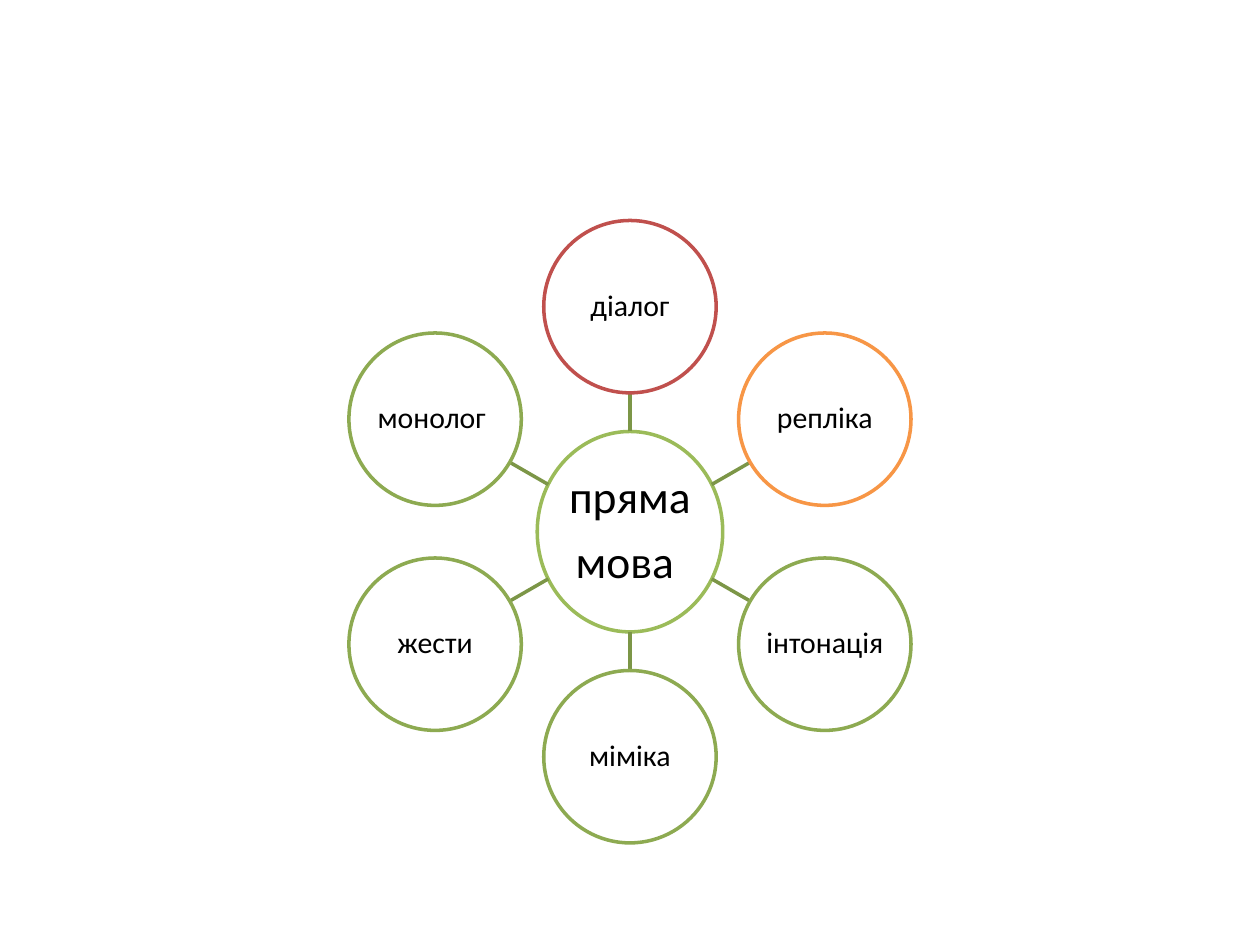
from math import cos, hypot, radians, sin

from pptx import Presentation
from pptx import util as u
from pptx.dml.color import RGBColor
from pptx.enum import shapes, text
from pptx.oxml.ns import qn
from lxml import etree

WIDTH, HEIGHT = 10, 7.5
GREEN, RED, ORANGE = "8DAA51", "C0504D", "F79646"
HUB_COLOR, SPOKE_COLOR = "9BBB59", "7C9647"
HUB_LINES = ["пряма ", "мова "]
SATELLITES = [  # clockwise from the top
    ("діалог", RED),
    ("репліка", ORANGE),
    ("інтонація", GREEN),
    ("міміка", GREEN),
    ("жести", GREEN),
    ("монолог ", GREEN),
]


def color(hex_string):
    return RGBColor.from_string(hex_string)


def add_bubble(slide, center, size, lines, font_size, outline, inset):
    """Add a white ellipse around a center, with one paragraph per line."""
    (x, y), (width, height) = center, size
    bubble = slide.shapes.add_shape(
        shapes.MSO_SHAPE.OVAL, u.Inches(x - width / 2), u.Inches(y - height / 2),
        u.Inches(width), u.Inches(height))
    bubble.shadow.inherit = False
    bubble.fill.solid()
    bubble.fill.fore_color.rgb = color("FFFFFF")
    bubble.line.color.rgb = color(outline)
    bubble.line.width = u.Pt(2)

    frame = bubble.text_frame
    frame.word_wrap = True
    frame.vertical_anchor = text.MSO_ANCHOR.MIDDLE
    frame.margin_left = frame.margin_right = u.Inches(inset)
    frame.margin_top = frame.margin_bottom = u.Inches(inset)
    frame.text = "\n".join(lines)
    for paragraph in frame.paragraphs:
        paragraph.alignment = text.PP_ALIGN.CENTER
        paragraph.line_spacing = 0.9
        paragraph.space_after = u.Pt(0.35 * font_size)
        paragraph.font.name = "Calibri"
        paragraph.font.size = u.Pt(font_size)
        paragraph.font.color.rgb = color("000000")


def add_spoke(slide, start, end):
    spoke = slide.shapes.add_connector(
        shapes.MSO_CONNECTOR.STRAIGHT, *(u.Inches(value) for value in (*start, *end)))
    spoke.line.color.rgb = color(SPOKE_COLOR)
    spoke.line.width = u.Pt(2)
    etree.SubElement(spoke._element.spPr, qn("a:effectLst"))


def add_radial_diagram(slide, left, top, width, height):
    """Place a hub and its ring of satellites in a box."""
    center_x, center_y = left + width / 2, top + height / 2
    diameter = 0.277 * height
    orbit = (height - diameter) / 2
    hub_width, hub_height = 0.298 * height, 0.322 * height

    def at(distance, angle):
        return center_x + distance * cos(angle), center_y + distance * sin(angle)

    add_bubble(slide, (center_x, center_y), (hub_width, hub_height),
               HUB_LINES, 26, HUB_COLOR, 0.02)
    for index, (label, outline) in enumerate(SATELLITES):
        angle = radians(index * 360 / len(SATELLITES) - 90)
        hub_edge = 1 / hypot(2 * cos(angle) / hub_width, 2 * sin(angle) / hub_height)
        add_spoke(slide, at(hub_edge, angle), at(orbit - diameter / 2, angle))
        add_bubble(slide, at(orbit, angle), (diameter, diameter),
                   [label], 17, outline, 0.01)


def main():
    presentation = Presentation()
    presentation.slide_width = u.Inches(WIDTH)
    presentation.slide_height = u.Inches(HEIGHT)
    slide = presentation.slides.add_slide(presentation.slide_layouts[6])
    add_radial_diagram(slide, 0.05 * WIDTH, 1.75, 0.9 * WIDTH, 4.94)
    presentation.save("out.pptx")


if __name__ == "__main__":
    main()
